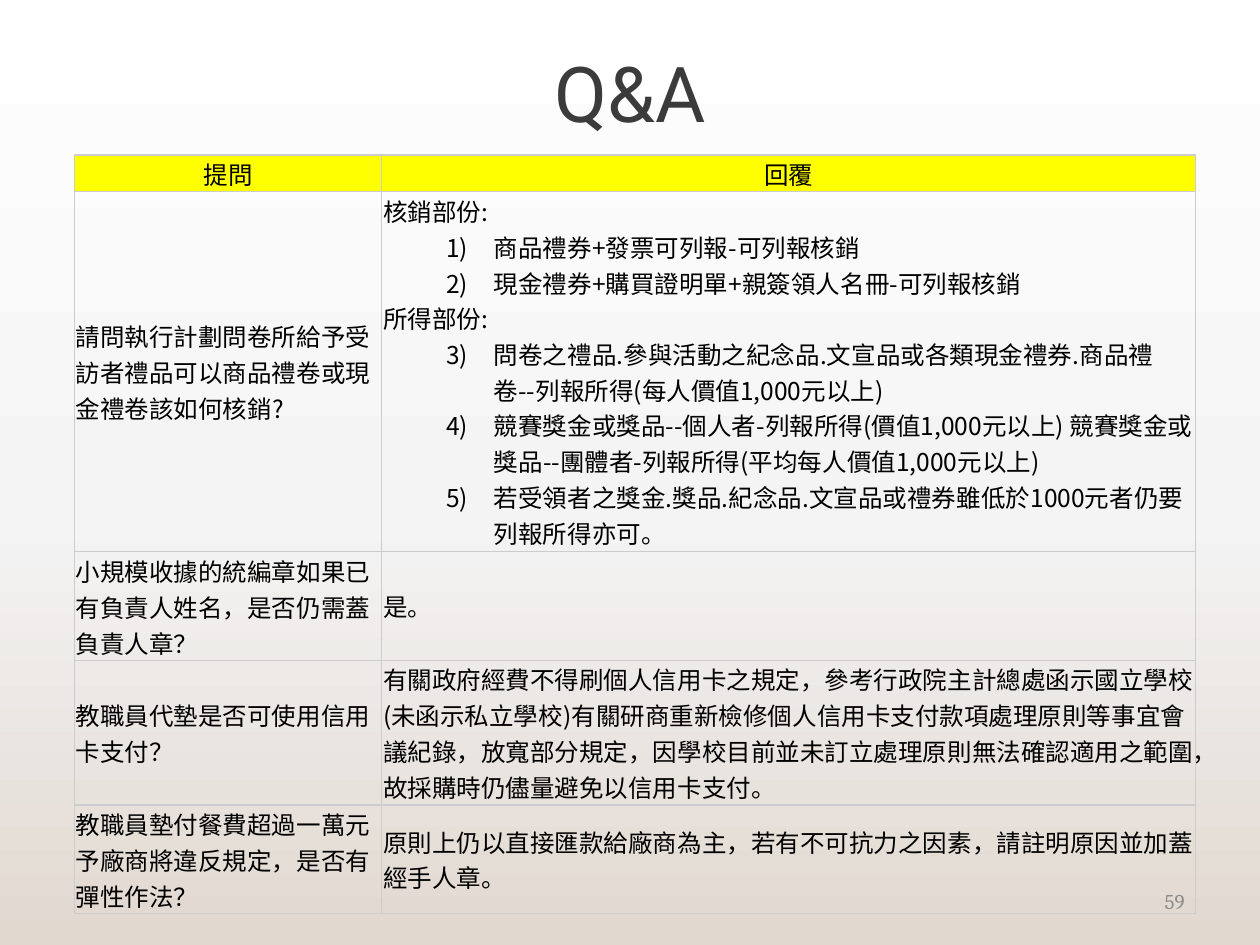
from copy import deepcopy
from dataclasses import dataclass

from pptx import Presentation
from pptx.dml.color import RGBColor as RGB
from pptx.enum.text import MSO_ANCHOR as ANCHOR, PP_ALIGN as ALIGN
from pptx.oxml.ns import qn
from pptx.oxml.xmlchemy import OxmlElement as Element
from pptx.util import Inches, Pt


@dataclass(frozen=True)
class Theme:
    title_font: str = "Roboto"
    body_font: str = "Noto Sans CJK SC"
    number_font: str = "Cambria"
    title_size: int = 44
    body_size: int = 14
    number_size: int = 12
    title_color: str = "3B3B3B"
    body_color: str = "000000"
    number_color: str = "8C8C8C"
    header_fill: str = "FFFF00"
    border_color: str = "CCCCCC"
    border_width: float = 0.75
    background: tuple = ((0, "FFFFFF"), (0.55, "F4F4F4"), (1, "E1D8D0"))


HEADER = ("提問", "回覆")
# An answer is a list of paragraphs; a tuple inside it holds numbered items.
QUESTIONS = [
    ("請問執行計劃問卷所給予受訪者禮品可以商品禮卷或現金禮卷該如何核銷?", [
        "核銷部份:",
        ("商品禮券+發票可列報-可列報核銷",
         "現金禮券+購買證明單+親簽領人名冊-可列報核銷"),
        "所得部份:",
        ("問卷之禮品.參與活動之紀念品.文宣品或各類現金禮券.商品禮卷--列報所得(每人價值1,000元以上)",
         "競賽獎金或獎品--個人者-列報所得(價值1,000元以上) "
         "競賽獎金或獎品--團體者-列報所得(平均每人價值1,000元以上)",
         "若受領者之獎金.獎品.紀念品.文宣品或禮券雖低於1000元者仍要列報所得亦可。"),
    ]),
    ("小規模收據的統編章如果已有負責人姓名，是否仍需蓋負責人章？", ["是。"]),
    ("教職員代墊是否可使用信用卡支付？", [
        "有關政府經費不得刷個人信用卡之規定，參考行政院主計總處函示國立學校(未函示私立學校)"
        "有關研商重新檢修個人信用卡支付款項處理原則等事宜會議紀錄，放寬部分規定，"
        "因學校目前並未訂立處理原則無法確認適用之範圍，故採購時仍儘量避免以信用卡支付。"]),
    ("教職員墊付餐費超過一萬元予廠商將違反規定，是否有彈性作法？", [
        "原則上仍以直接匯款給廠商為主，若有不可抗力之因素，請註明原因並加蓋經手人章。"]),
]
COL_WIDTHS = (2.44, 6.46)
ROW_HEIGHTS = (0.29, 2.86, 0.86, 1.15, 0.86)


class SlideBuilder:
    def __init__(self, prs, theme):
        self.theme = theme
        self.slide = prs.slides.add_slide(prs.slide_layouts[5])

    def background(self):
        fill = self.slide.background.fill
        fill.gradient()
        fill.gradient_angle = 270
        stops = self.slide.element.find(".//" + qn("a:gsLst"))
        stops.append(deepcopy(stops[-1]))
        for stop, (position, color) in zip(fill.gradient_stops, self.theme.background):
            stop.position = position
            stop.color.rgb = RGB.from_string(color)

    def style(self, p, font, size, color, align=ALIGN.LEFT):
        p.alignment = align
        for r in p.runs:
            r.font.name = font
            r.font.size = Pt(size)
            r.font.color.rgb = RGB.from_string(color)
            ea = Element("a:ea")
            ea.set("typeface", font)
            r.font._element.find(qn("a:latin")).addnext(ea)

    def title(self, text, left, top, width, height):
        t = self.theme
        sp = self.slide.shapes.title
        sp.left, sp.top = Inches(left), Inches(top)
        sp.width, sp.height = Inches(width), Inches(height)
        tf = sp.text_frame
        tf.text = text
        tf.vertical_anchor = ANCHOR.MIDDLE
        self.style(tf.paragraphs[0], t.title_font, t.title_size, t.title_color, ALIGN.CENTER)

    def page_number(self, text, left, top, width, height):
        t = self.theme
        sp = self.slide.shapes.add_textbox(
            Inches(left), Inches(top), Inches(width), Inches(height))
        tf = sp.text_frame
        tf.word_wrap = True
        tf.vertical_anchor = ANCHOR.MIDDLE
        tf.text = text
        self.style(tf.paragraphs[0], t.number_font, t.number_size, t.number_color, ALIGN.RIGHT)

    def number(self, p):
        """Make the paragraph a numbered item with a hanging indent."""
        p.level = 1
        pPr = p._p.get_or_add_pPr()
        pPr.set("marL", str(Inches(0.88)))
        pPr.set("indent", str(Inches(-0.38)))
        bullet = Element("a:buAutoNum")
        bullet.set("type", "arabicParenR")
        pPr.append(bullet)

    def borders(self, cell):
        tcPr = cell._tc.get_or_add_tcPr()
        for side in ("lnL", "lnR", "lnT", "lnB"):
            ln = Element("a:" + side)
            ln.set("w", str(Pt(self.theme.border_width)))
            fill, color = Element("a:solidFill"), Element("a:srgbClr")
            color.set("val", self.theme.border_color)
            fill.append(color)
            ln.append(fill)
            tcPr.append(ln)

    def cell(self, cell, content, header=False):
        t = self.theme
        cell.margin_left = cell.margin_right = Inches(0.01)
        cell.margin_top = cell.margin_bottom = Inches(0.01)
        cell.vertical_anchor = ANCHOR.MIDDLE
        self.borders(cell)
        if header:
            cell.fill.solid()
            cell.fill.fore_color.rgb = RGB.from_string(t.header_fill)
        else:
            cell.fill.background()

        lines = []
        for block in content:
            numbered = isinstance(block, tuple)
            lines += [(text, numbered) for text in (block if numbered else (block,))]
        tf = cell.text_frame
        for i, (text, numbered) in enumerate(lines):
            p = tf.add_paragraph() if i else tf.paragraphs[0]
            p.text = text
            if numbered:
                self.number(p)
            self.style(p, t.body_font, t.body_size, t.body_color,
                       ALIGN.CENTER if header else ALIGN.LEFT)

    def table(self, left, top):
        table = self.slide.shapes.add_table(
            len(ROW_HEIGHTS), len(COL_WIDTHS), Inches(left), Inches(top),
            Inches(sum(COL_WIDTHS)), Inches(sum(ROW_HEIGHTS))).table
        table.first_row = table.horz_banding = False
        for column, width in zip(table.columns, COL_WIDTHS):
            column.width = Inches(width)
        for row, height in zip(table.rows, ROW_HEIGHTS):
            row.height = Inches(height)
        for c, text in enumerate(HEADER):
            self.cell(table.cell(0, c), [text], header=True)
        for i, (question, answer) in enumerate(QUESTIONS, start=1):
            self.cell(table.cell(i, 0), [question])
            self.cell(table.cell(i, 1), answer)


def main():
    prs = Presentation()
    prs.slide_width, prs.slide_height = Inches(10), Inches(7.5)
    s = SlideBuilder(prs, Theme())
    s.background()
    s.title("Q&A", 0.5, 0.3, 9, 0.85)
    s.page_number("59", 7.17, 6.95, 2.33, 0.4)
    s.table(0.59, 1.23)
    prs.save("out.pptx")


if __name__ == "__main__":
    main()
